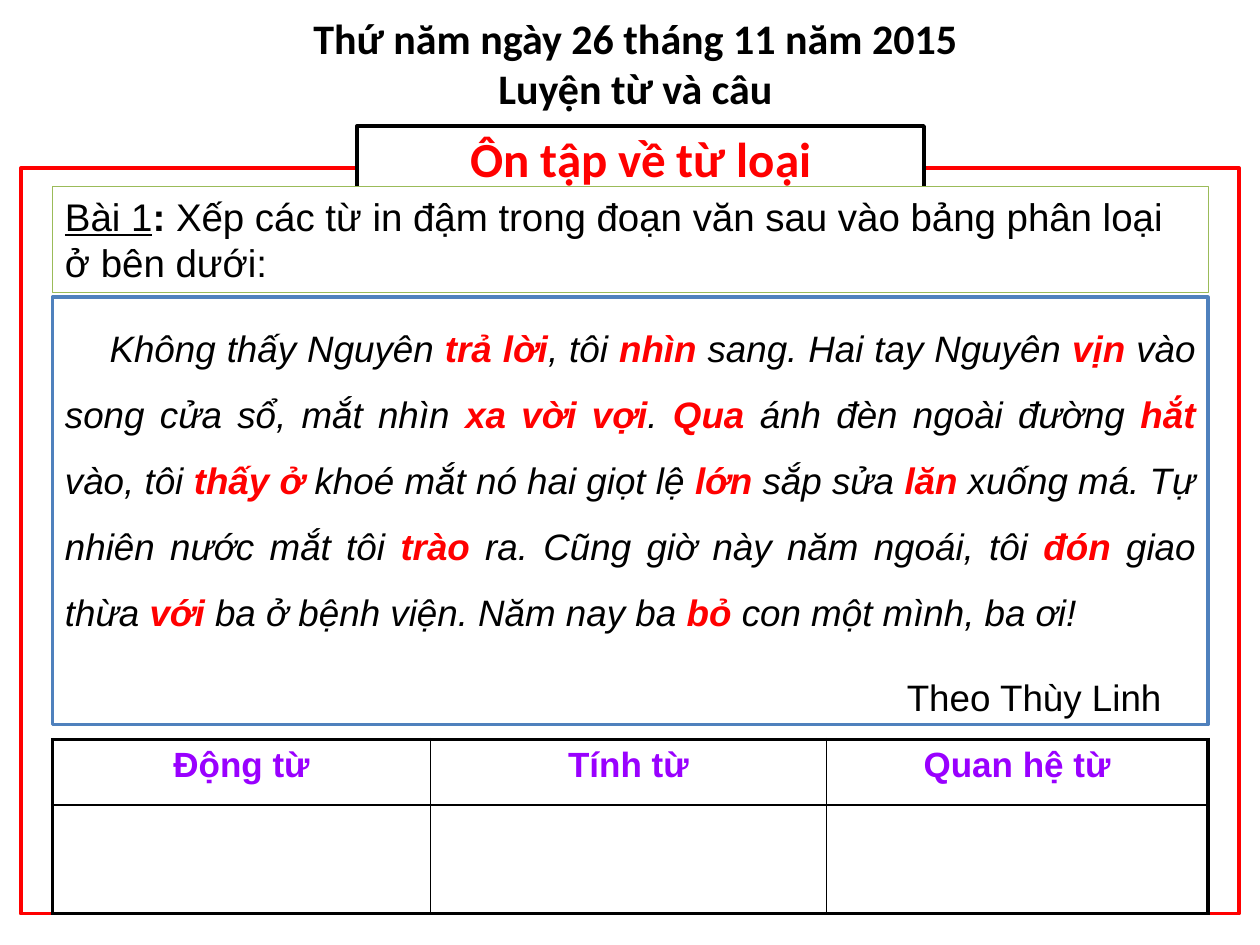
import pptx
import pptx.dml.color
import pptx.enum.shapes
import pptx.enum.text
import pptx.oxml
import pptx.oxml.ns
import pptx.util

Cm = pptx.util.Cm
Pt = pptx.util.Pt
RGBColor = pptx.dml.color.RGBColor
ALIGN = pptx.enum.text.PP_ALIGN
ANCHOR = pptx.enum.text.MSO_ANCHOR

BLACK = RGBColor(0x00, 0x00, 0x00)
WHITE = RGBColor(0xFF, 0xFF, 0xFF)
RED = RGBColor(0xFF, 0x00, 0x00)
GREEN = RGBColor(0x9B, 0xBB, 0x59)
BLUE = RGBColor(0x4F, 0x81, 0xBD)
PURPLE = RGBColor(0x99, 0x00, 0xFF)

PASSAGE = [
    ("Không thấy Nguyên ", "trả lời"),
    (", tôi ", "nhìn"),
    (" sang. Hai tay Nguyên ", "vịn "),
    ("vào song cửa sổ, mắt nhìn ", "xa vời vợi"),
    (". ", "Qua "),
    ("ánh đèn ngoài đường ", "hắt "),
    ("vào, tôi ", "thấy ở "),
    ("khoé mắt nó hai giọt lệ ", "lớn "),
    ("sắp sửa ", "lăn "),
    ("xuống má. Tự nhiên nước mắt tôi ", "trào "),
    ("ra. Cũng giờ này năm ngoái, tôi ", "đón "),
    ("giao thừa ", "với "),
    ("ba ở bệnh viện. Năm nay ba ", "bỏ "),
]
PASSAGE_END = "con một mình, ba ơi!"
WORD_CLASSES = ["Động từ", "Tính từ", "Quan hệ từ"]


def add_run(paragraph, text, size, color=BLACK, font="Arial", bold=False, italic=False, underline=False):
    run = paragraph.add_run()
    run.text = text
    run.font.name = font
    run.font.size = Pt(size)
    run.font.color.rgb = color
    run.font.bold = bold
    run.font.italic = italic
    run.font.underline = underline


def add_panel(slide, box, line_color, line_width, anchor=ANCHOR.TOP):
    panel = slide.shapes.add_shape(pptx.enum.shapes.MSO_SHAPE.RECTANGLE, *map(Cm, box))
    panel.shadow.inherit = False
    panel.fill.solid()
    panel.fill.fore_color.rgb = WHITE
    panel.line.color.rgb = line_color
    panel.line.width = Pt(line_width)
    panel.text_frame.word_wrap = True
    panel.text_frame.vertical_anchor = anchor
    return panel.text_frame


def add_heading(slide, box):
    frame = slide.shapes.add_textbox(*map(Cm, box)).text_frame
    frame.word_wrap = True
    frame.vertical_anchor = ANCHOR.MIDDLE
    paragraph = frame.paragraphs[0]
    paragraph.alignment = ALIGN.CENTER
    add_run(paragraph, "Thứ năm ngày 26 tháng 11 năm 2015", 24, font="Calibri", bold=True)
    paragraph.add_line_break()
    add_run(paragraph, "Luyện từ và câu", 24, font="Calibri", bold=True)


def add_lesson_title(slide, box):
    paragraph = add_panel(slide, box, BLACK, 2, ANCHOR.MIDDLE).paragraphs[0]
    paragraph.alignment = ALIGN.CENTER
    add_run(paragraph, "Ôn tập về từ loại", 28, RED, "Calibri", bold=True)


def add_exercise(slide, box):
    paragraph = add_panel(slide, box, GREEN, 0.25).paragraphs[0]
    paragraph.alignment = ALIGN.LEFT
    add_run(paragraph, "Bài 1", 22, underline=True)
    add_run(paragraph, ": ", 22, bold=True)
    add_run(paragraph, "Xếp các từ in đậm trong đoạn văn sau vào bảng phân loại ở bên dưới:", 22)


def add_passage(slide, box):
    frame = add_panel(slide, box, BLUE, 2)
    story = frame.paragraphs[0]
    story.alignment = ALIGN.JUSTIFY
    story.line_spacing = 1.5
    story._p.get_or_add_pPr().set("indent", str(Cm(0.9)))
    for plain, marked in PASSAGE:
        add_run(story, plain, 21, italic=True)
        add_run(story, marked, 21, RED, bold=True, italic=True)
    add_run(story, PASSAGE_END, 21, italic=True)

    author = frame.add_paragraph()
    author.alignment = ALIGN.LEFT
    author.line_spacing = 1.5
    author.space_before = Pt(10.5)
    author._p.get_or_add_pPr().set("marL", str(Cm(16.97)))
    add_run(author, "Theo Thùy Linh", 21)


def set_border(cell, side, width):
    namespace = pptx.oxml.ns.nsdecls("a")
    border = pptx.oxml.parse_xml(
        f'<a:{side} {namespace} w="{Pt(width)}"><a:solidFill>'
        f'<a:srgbClr val="{BLACK}"/></a:solidFill></a:{side}>'
    )
    cell._tc.get_or_add_tcPr().append(border)


def add_word_table(slide, box):
    column_widths = [7.62, 7.98, 7.69]
    row_heights = [1.32, 2.19]
    last_row, last_column = len(row_heights) - 1, len(column_widths) - 1
    table = slide.shapes.add_table(last_row + 1, last_column + 1, *map(Cm, box)).table
    table.first_row = False
    table.horz_banding = False
    for column, width in zip(table.columns, column_widths):
        column.width = Cm(width)
    for row, height in zip(table.rows, row_heights):
        row.height = Cm(height)
    for i in range(last_row + 1):
        for j in range(last_column + 1):
            cell = table.cell(i, j)
            outer_sides = {"lnL": j == 0, "lnR": j == last_column, "lnT": i == 0, "lnB": i == last_row}
            for side, outer in outer_sides.items():
                set_border(cell, side, 2.25 if outer else 1)
            cell.fill.background()
    for j, word_class in enumerate(WORD_CLASSES):
        paragraph = table.cell(0, j).text_frame.paragraphs[0]
        paragraph.alignment = ALIGN.CENTER
        add_run(paragraph, word_class, 20, PURPLE, bold=True)


def main():
    presentation = pptx.Presentation()
    presentation.slide_width = Cm(25.4)
    presentation.slide_height = Cm(19.05)
    slide = presentation.slides.add_slide(presentation.slide_layouts[6])
    left, width = 1.06, 23.29
    add_panel(slide, (0.42, 3.39, 24.56, 15.03), RED, 2)
    add_heading(slide, (0.85, 0, 23.92, 2.54))
    add_lesson_title(slide, (7.2, 2.54, 11.43, 1.27))
    add_exercise(slide, (left, 3.76, width, 2.14))
    add_passage(slide, (left, 5.99, width, 8.62))
    add_word_table(slide, (left, 14.91, width, 3.51))
    presentation.save("out.pptx")


if __name__ == "__main__":
    main()
